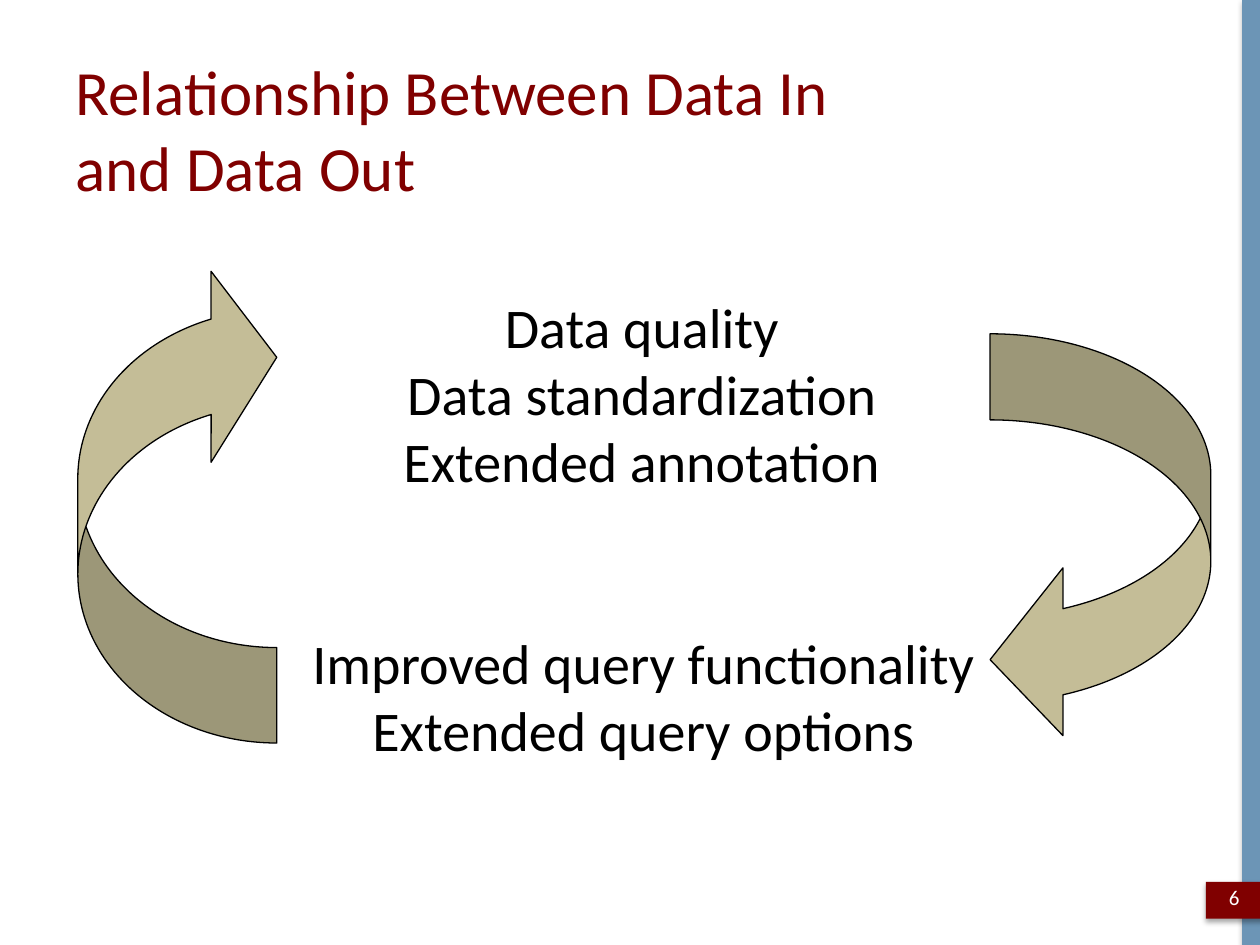
import pptx
import pptx.dml.color
import pptx.enum.shapes
import pptx.enum.text
import pptx.oxml
import pptx.oxml.ns
import pptx.util
from pptx.util import Cm

MSO_SHAPE = pptx.enum.shapes.MSO_SHAPE
PP_ALIGN = pptx.enum.text.PP_ALIGN
MSO_ANCHOR = pptx.enum.text.MSO_ANCHOR

BLACK = "000000"
WHITE = "FFFFFF"
MAROON = "800000"
STEEL = "6C95B6"
TAN = "C4BD97"

SHADOW = (
    f'<a:effectLst {pptx.oxml.ns.nsdecls("a")}>'
    '<a:outerShdw blurRad="39370" dist="22860" dir="5400000" rotWithShape="0">'
    '<a:srgbClr val="000000"><a:alpha val="35000"/></a:srgbClr>'
    '</a:outerShdw></a:effectLst>'
)


def rgb(value):
    return pptx.dml.color.RGBColor.from_string(value)


def add_filled_shape(s, kind, box, color):
    sp = s.shapes.add_shape(kind, *map(Cm, box))
    sp.shadow.inherit = False
    sp.fill.solid()
    sp.fill.fore_color.rgb = rgb(color)
    return sp


def add_band(s, box, color):
    sp = add_filled_shape(s, MSO_SHAPE.RECTANGLE, box, color)
    sp.line.fill.background()
    props = sp._element.spPr
    props.remove(props.find(pptx.oxml.ns.qn("a:effectLst")))
    props.append(pptx.oxml.parse_xml(SHADOW))


def add_curved_arrow(s, kind, box, adjustments, flip=False):
    sp = add_filled_shape(s, kind, box, TAN)
    sp.line.color.rgb = rgb(BLACK)
    sp.line.width = pptx.util.Pt(0.75)
    for i, value in enumerate(adjustments):
        sp.adjustments[i] = value
    if flip:
        sp._element.spPr.xfrm.set("flipV", "1")


def format_text(tf, size, color, align):
    for p in tf.paragraphs:
        p.alignment = align
        for r in p.runs:
            r.font.name = "Calibri"
            r.font.size = pptx.util.Pt(size)
            r.font.color.rgb = rgb(color)


def add_text(s, box, text, size=32, color=BLACK, wrap=True, anchor=MSO_ANCHOR.TOP):
    tf = s.shapes.add_textbox(*map(Cm, box)).text_frame
    tf.word_wrap = wrap
    tf.vertical_anchor = anchor
    tf.text = text
    format_text(tf, size, color, PP_ALIGN.CENTER)


def set_title(s, box, text):
    title = s.shapes.title
    title.left, title.top, title.width, title.height = map(Cm, box)
    tf = title.text_frame
    tf.vertical_anchor = MSO_ANCHOR.MIDDLE
    tf.paragraphs[0].text = text
    format_text(tf, 36, MAROON, PP_ALIGN.LEFT)


def main():
    prs = pptx.Presentation()
    prs.slide_width, prs.slide_height = Cm(25.4), Cm(19.05)
    s = prs.slides.add_slide(prs.slide_layouts[5])

    add_band(s, (25.04, 0, 0.36, 19.05), STEEL)
    add_band(s, (24.31, 17.78, 1.22, 0.74), MAROON)
    add_curved_arrow(s, MSO_SHAPE.CURVED_LEFT_ARROW,
                     (19.96, 6.73, 4.45, 8.26), (0.39, 0.76, 0.33))
    add_text(s, (7.82, 5.77, 10.24, 4.37),
             "Data quality\nData standardization\nExtended annotation ", wrap=False)
    add_curved_arrow(s, MSO_SHAPE.CURVED_RIGHT_ARROW,
                     (1.57, 5.28, 4.01, 9.7), (0.48, 0.96, 0.33), flip=True)
    add_text(s, (5.99, 12.55, 13.97, 3),
             "Improved query functionality\nExtended query options")
    set_title(s, (1.27, 0.76, 23.6, 3.66),
              "Relationship Between Data In \vand Data Out")
    add_text(s, (24.31, 17.58, 1.14, 1.02), "6", 12, WHITE, anchor=MSO_ANCHOR.MIDDLE)

    prs.save("out.pptx")


if __name__ == "__main__":
    main()
